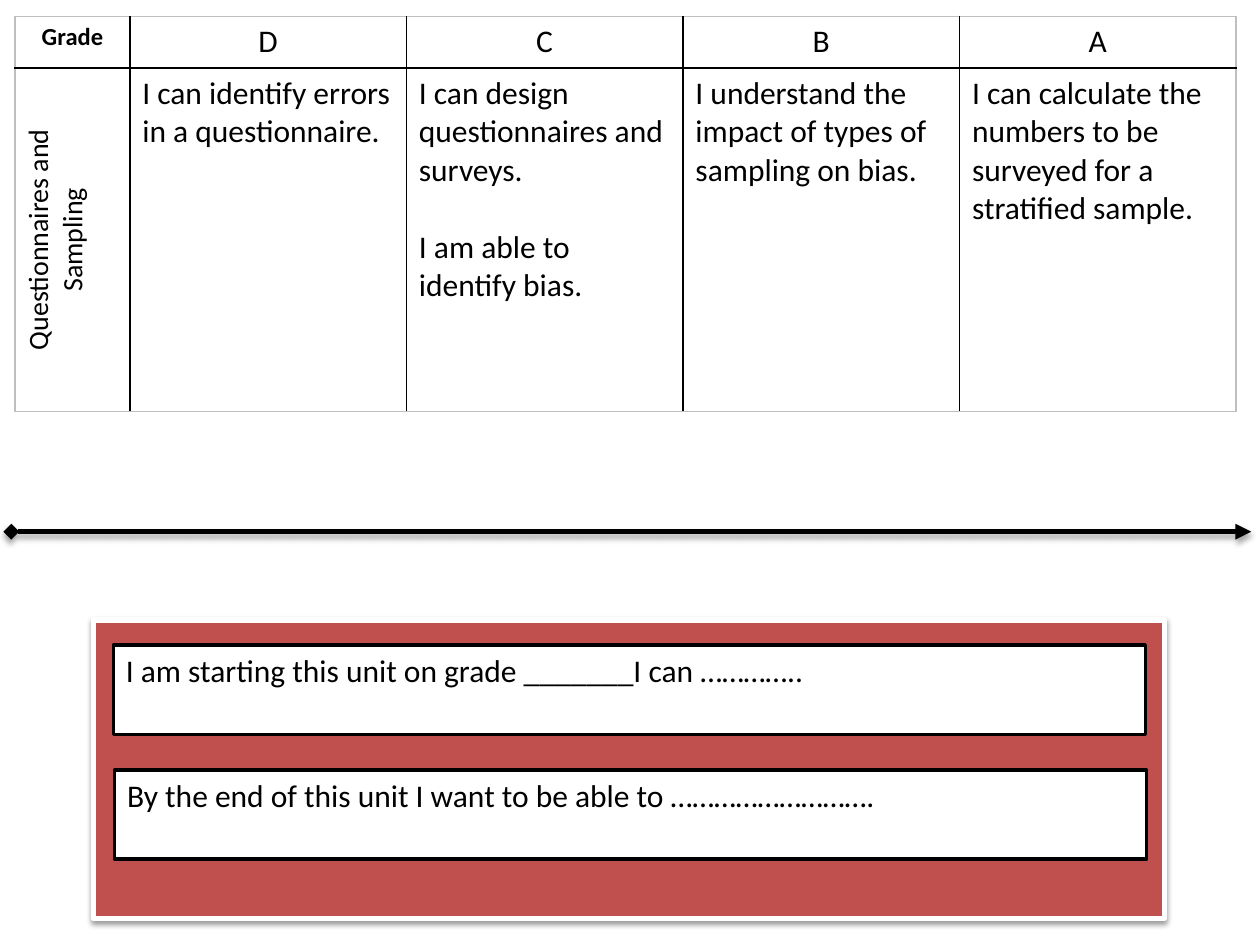
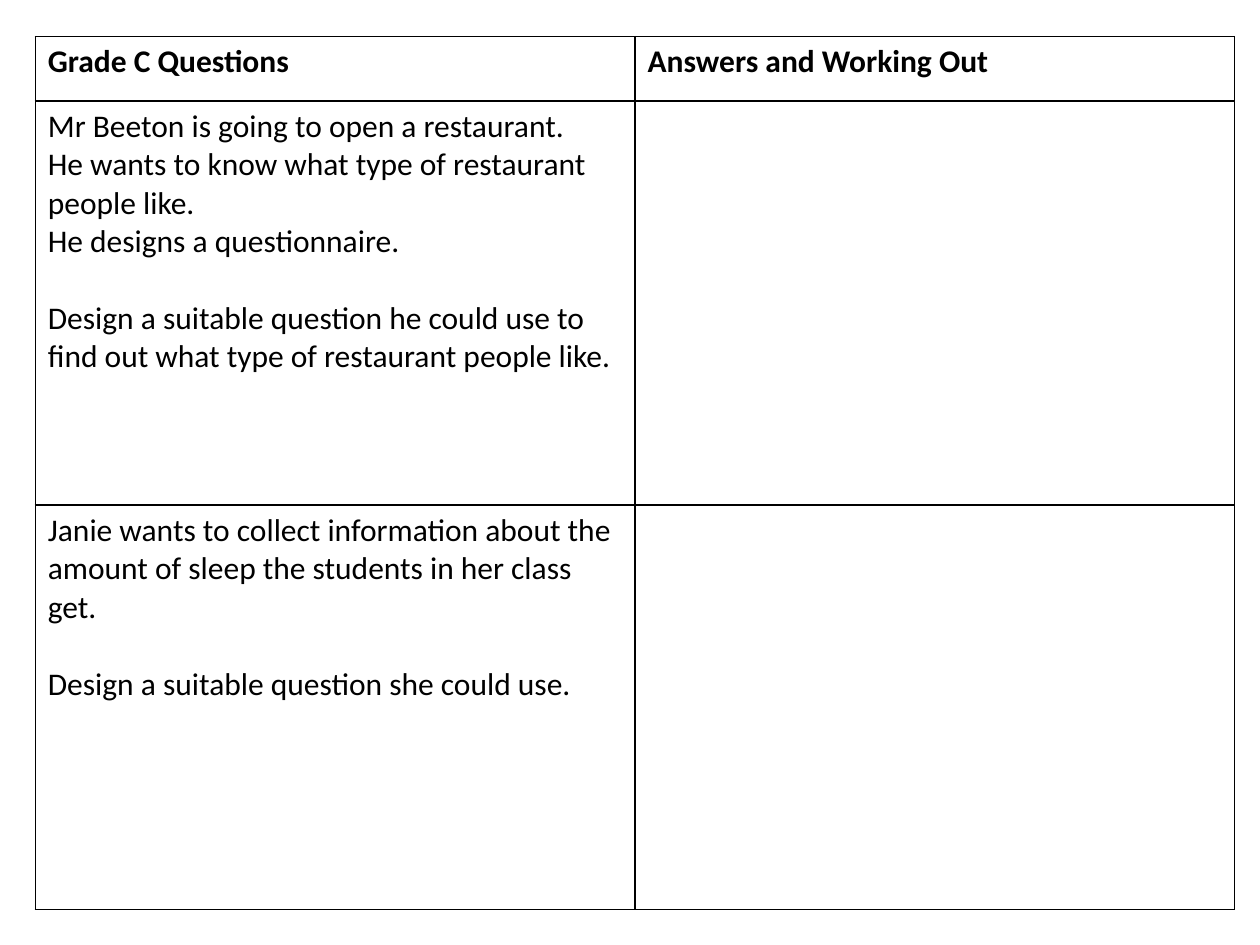
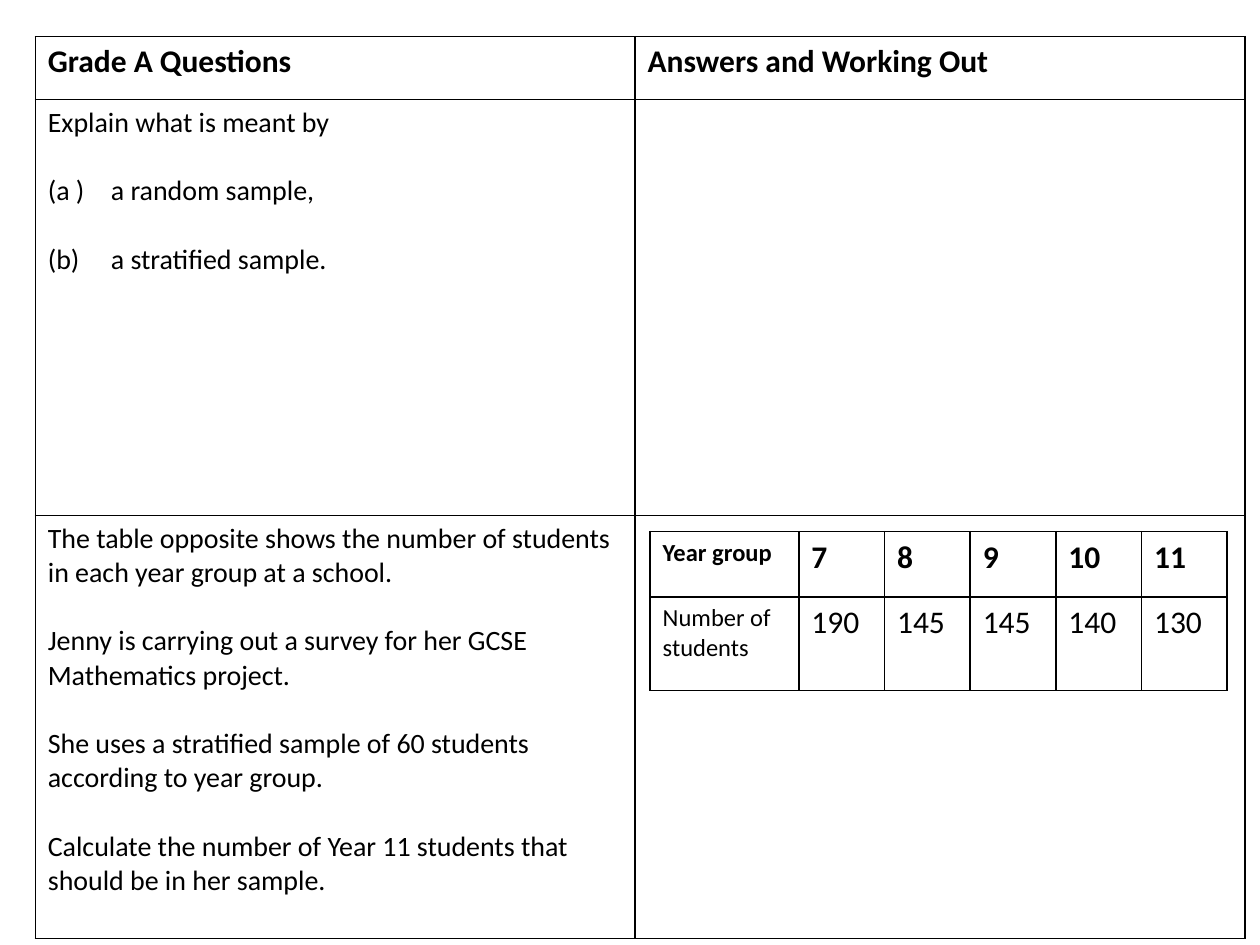
from dataclasses import dataclass

from lxml import etree
from pptx import Presentation
from pptx.dml.color import RGBColor
from pptx.enum.shapes import MSO_CONNECTOR, MSO_SHAPE
from pptx.enum.text import MSO_ANCHOR, PP_ALIGN
from pptx.oxml.ns import qn
from pptx.util import Inches, Pt

LEFT, CENTER = PP_ALIGN.LEFT, PP_ALIGN.CENTER
TOP = MSO_ANCHOR.TOP
RECTANGLE = MSO_SHAPE.RECTANGLE
STRAIGHT = MSO_CONNECTOR.STRAIGHT

COLORS = {"ink": "000000", "paper": "FFFFFF", "panel": "C0504D", "frame": "BFBFBF"}
FONT = "Calibri"
LINE_HEIGHT = 1.22
ANSWERS = "Answers and Working Out"


@dataclass(frozen=True)
class Cell:
    """Table cell text; a blank line in it becomes paragraph spacing."""
    text: str = ""
    size: int = 18
    bold: bool = False
    align: PP_ALIGN = LEFT
    vertical: bool = False


@dataclass(frozen=True)
class Grid:
    left: float
    top: float
    columns: list[float]
    rows: list[float]
    cells: list[list[Cell]]
    frame: str = "ink"


@dataclass(frozen=True)
class Panel:
    left: float
    top: float
    width: float
    height: float
    fill: str
    line: str
    line_width: float
    text: str = ""


def color(name: str) -> RGBColor:
    return RGBColor.from_string(COLORS[name])


def write_text(frame, text: str, *, size: int = 18, bold: bool = False,
               align: PP_ALIGN = LEFT) -> None:
    frame.word_wrap = True
    para = frame.paragraphs[0]
    for block_index, block in enumerate(text.split("\n\n")):
        for line_index, line in enumerate(block.split("\n")):
            if block_index or line_index:
                para = frame.add_paragraph()
            if block_index and not line_index:
                para.space_before = Pt(round(size * LINE_HEIGHT, 1))
            para.alignment = align
            span = para.add_run()
            span.text = line
            span.font.name = FONT
            span.font.size = Pt(size)
            span.font.bold = bold
            span.font.color.rgb = color("ink")


def add_solid_color(parent, name: str):
    fill = etree.SubElement(parent, qn("a:solidFill"))
    return etree.SubElement(fill, qn("a:srgbClr"), val=COLORS[name])


def add_shadow(shape, opacity: int, distance: float) -> None:
    effects = etree.SubElement(shape._element.spPr, qn("a:effectLst"))
    shadow = etree.SubElement(effects, qn("a:outerShdw"), blurRad=str(Pt(3.15)),
                              dist=str(Pt(distance)), dir="5400000", rotWithShape="0")
    tint = add_solid_color(shadow, "ink")
    fill = tint.getparent()
    shadow.replace(fill, tint)
    etree.SubElement(tint, qn("a:alpha"), val=str(opacity * 1000))


def set_border(cell, side: str, name: str) -> None:
    border = etree.SubElement(cell._tc.get_or_add_tcPr(), qn(f"a:ln{side}"), w=str(Pt(1)))
    add_solid_color(border, name)


def add_grid(page, grid: Grid) -> None:
    last_row, last_column = len(grid.rows) - 1, len(grid.columns) - 1
    table = page.shapes.add_table(
        last_row + 1, last_column + 1, Inches(grid.left), Inches(grid.top),
        Inches(sum(grid.columns)), Inches(sum(grid.rows))).table
    table.first_row = table.horz_banding = False
    for column, width in zip(table.columns, grid.columns):
        column.width = Inches(width)
    for row, height in zip(table.rows, grid.rows):
        row.height = Inches(height)
    for r, row_cells in enumerate(grid.cells):
        for c, content in enumerate(row_cells):
            cell = table.cell(r, c)
            outer_sides = {"L": c == 0, "R": c == last_column,
                           "T": r == 0, "B": r == last_row}
            for side, is_outer in outer_sides.items():
                set_border(cell, side, grid.frame if is_outer else "ink")
            cell.fill.background()
            if content.vertical:
                cell._tc.get_or_add_tcPr().set("vert", "vert270")
            if content.text:
                write_text(cell.text_frame, content.text, size=content.size,
                           bold=content.bold, align=content.align)


def add_panel(page, panel: Panel):
    box = page.shapes.add_shape(RECTANGLE, Inches(panel.left), Inches(panel.top),
                                Inches(panel.width), Inches(panel.height))
    box.fill.solid()
    box.fill.fore_color.rgb = color(panel.fill)
    box.line.color.rgb = color(panel.line)
    box.line.width = Pt(panel.line_width)
    if panel.text:
        box.shadow.inherit = False
        box.text_frame.vertical_anchor = TOP
        write_text(box.text_frame, panel.text)
    return box


def add_progress_arrow(page) -> None:
    arrow = page.shapes.add_connector(STRAIGHT, Inches(0.09), Inches(4.22),
                                      Inches(9.93), Inches(4.22))
    arrow.line.color.rgb = color("ink")
    arrow.line.width = Pt(3)
    line = arrow.line._get_or_add_ln()
    etree.SubElement(line, qn("a:headEnd"), type="diamond")
    etree.SubElement(line, qn("a:tailEnd"), type="triangle")
    add_shadow(arrow, 35, 1.8)


def build_grades(page) -> None:
    skills = {
        "D": "I can identify errors in a questionnaire.",
        "C": "I can design questionnaires and surveys.\n\nI am able to identify bias.",
        "B": "I understand the impact of types of sampling on bias.",
        "A": "I can calculate the numbers to be surveyed for a stratified sample.",
    }
    header = [Cell("Grade", 14, True, CENTER)]
    header += [Cell(grade, align=CENTER) for grade in skills]
    topic = Cell("Questionnaires and Sampling", 16, align=CENTER, vertical=True)
    body = [topic] + [Cell(skill) for skill in skills.values()]
    add_grid(page, Grid(0.12, 0.13, [0.91] + [2.195] * 4, [0.41, 2.72],
                        [header, body], frame="frame"))
    add_progress_arrow(page)
    backdrop = add_panel(page, Panel(0.74, 4.92, 8.5, 2.37, "panel", "paper", 3))
    add_shadow(backdrop, 38, 1.6)
    prompts = [
        (0.9, 5.12, "I am starting this unit on grade _______I can ………….."),
        (0.91, 6.11, "By the end of this unit I want to be able to ………………………."),
    ]
    for left, top, prompt in prompts:
        add_panel(page, Panel(left, top, 8.19, 0.71, "paper", "ink", 2, prompt))


def add_question_sheet(page, title: str, questions: list[str], *, size: int,
                       answer_width: float, rows: list[float]) -> None:
    cells = [[Cell(title, bold=True), Cell(ANSWERS, bold=True)]]
    cells += [[Cell(question, size), Cell()] for question in questions]
    add_grid(page, Grid(0.28, 0.29, [4.76, answer_width], rows, cells))


def build_grade_c(page) -> None:
    questions = [
        "Mr Beeton is going to open a restaurant.\n"
        "He wants to know what type of restaurant people like.\n"
        "He designs a questionnaire.\n\n"
        "Design a suitable question he could use to find out what type of "
        "restaurant people like.",
        "Janie wants to collect information about the amount of sleep the "
        "students in her class get.\n\n"
        "Design a suitable question she could use.",
    ]
    add_question_sheet(page, "Grade C Questions", questions, size=18,
                       answer_width=4.76, rows=[0.51, 3.21, 3.21])


def build_grade_a(page) -> None:
    questions = [
        "Explain what is meant by\n\n"
        "(a )\ta random sample,\n\n"
        "(b)\ta stratified sample.",
        "The table opposite shows the number of students in each year group "
        "at a school.\n\n"
        "Jenny is carrying out a survey for her GCSE Mathematics project.\n\n"
        "She uses a stratified sample of 60 students according to year group.\n\n"
        "Calculate the number of Year 11 students that should be in her sample.",
    ]
    add_question_sheet(page, "Grade A Questions", questions, size=16,
                       answer_width=4.84, rows=[0.5, 3.3, 3.36])
    students = {7: 190, 8: 145, 9: 145, 10: 140, 11: 130}
    years = [Cell("Year group", 14, True)]
    years += [Cell(str(year), bold=True) for year in students]
    counts = [Cell("Number of students", 14)]
    counts += [Cell(str(count)) for count in students.values()]
    add_grid(page, Grid(5.16, 4.22, [1.18] + [0.68] * len(students), [0.52, 0.74],
                        [years, counts]))


def main() -> None:
    deck = Presentation()
    deck.slide_width, deck.slide_height = Inches(10), Inches(7.5)
    for build in (build_grades, build_grade_c, build_grade_a):
        build(deck.slides.add_slide(deck.slide_layouts[6]))
    deck.save("out.pptx")


if __name__ == "__main__":
    main()
